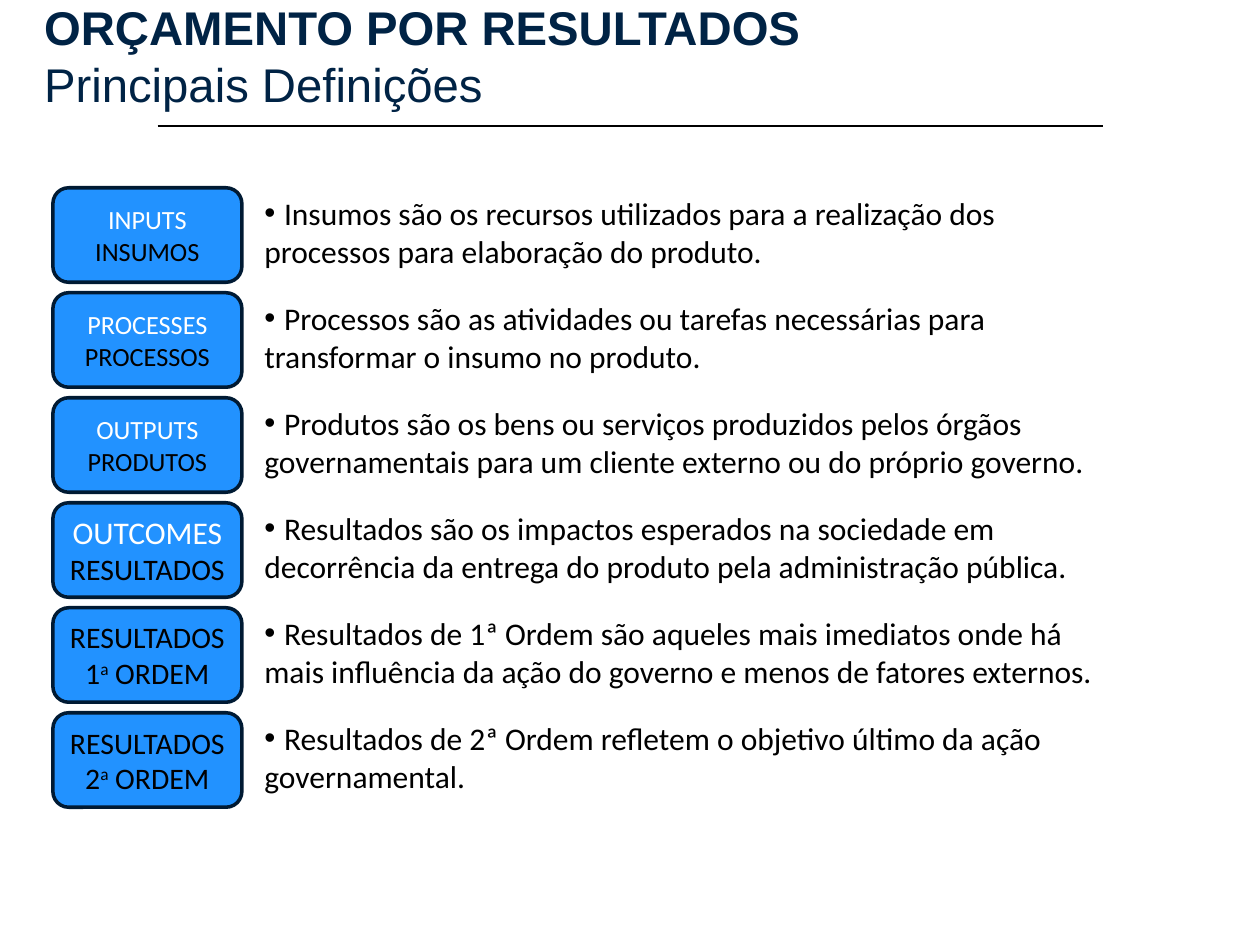
from dataclasses import dataclass

from lxml import etree
from pptx import Presentation
from pptx.dml.color import RGBColor
from pptx.enum.shapes import MSO_CONNECTOR, MSO_SHAPE
from pptx.enum.text import MSO_ANCHOR, MSO_AUTO_SIZE, PP_ALIGN
from pptx.oxml.ns import qn
from pptx.slide import Slide
from pptx.util import Inches, Pt

NAVY = RGBColor(0x00, 0x23, 0x45)
BLUE = RGBColor(0x22, 0x92, 0xFF)
EDGE = RGBColor(0x00, 0x1A, 0x33)
BLACK = RGBColor(0x00, 0x00, 0x00)
WHITE = RGBColor(0xFF, 0xFF, 0xFF)
BOX = MSO_SHAPE.FLOWCHART_ALTERNATE_PROCESS
LINE = MSO_CONNECTOR.STRAIGHT
MIDDLE, BOTTOM = MSO_ANCHOR.MIDDLE, MSO_ANCHOR.BOTTOM
LEFT, CENTER = PP_ALIGN.LEFT, PP_ALIGN.CENTER
FIXED, GROW = MSO_AUTO_SIZE.NONE, MSO_AUTO_SIZE.SHAPE_TO_FIT_TEXT
TITLE_ONLY = 5
TOP, PITCH = 1.49, 5 / 6


@dataclass
class Part:
    text: str
    size: float
    color: RGBColor = BLACK
    font: str = "Calibri"
    bold: bool = False
    raised: bool = False


@dataclass
class Row:
    label: list[list[Part]]
    text: str


def pair(first: str, second: str, size: int = 15, small: int = 15) -> list[list[Part]]:
    """English term in white above the Portuguese one in black."""
    return [[Part(first, size, WHITE)], [Part(second, small)]]


def order(num: int) -> list[list[Part]]:
    """Label of a result level, with a raised ordinal letter."""
    return [[Part(f"RESULTADOS {num}", 17), Part("a", 17, raised=True), Part(" ORDEM", 17)]]


ROWS = [
    Row(pair("INPUTS", "INSUMOS"),
        "Insumos são os recursos utilizados para a realização dos "
        "processos para elaboração do produto."),
    Row(pair("PROCESSES", "PROCESSOS"),
        "Processos são as atividades ou tarefas necessárias para "
        "transformar o insumo no produto."),
    Row(pair("OUTPUTS", "PRODUTOS"),
        "Produtos são os bens ou serviços produzidos pelos órgãos "
        "governamentais para um cliente externo ou do próprio governo."),
    Row(pair("OUTCOMES", "RESULTADOS", 18, 17),
        "Resultados são os impactos esperados na sociedade em "
        "decorrência da entrega do produto pela administração pública."),
    Row(order(1),
        "Resultados de 1ª Ordem são aqueles mais imediatos onde há "
        "mais influência da ação do governo e menos de fatores externos."),
    Row(order(2),
        "Resultados de 2ª Ordem refletem o objetivo último da ação governamental."),
]


def add_run(para, part: Part) -> None:
    run = para.add_run()
    run.text = part.text
    font = run.font
    font.name, font.size, font.bold = part.font, Pt(part.size), part.bold
    font.color.rgb = part.color
    if part.raised:
        run._r.get_or_add_rPr().set("baseline", "30000")


def add_title(slide: Slide) -> None:
    title = slide.shapes.title
    title.left, title.top = Inches(0.35), Inches(0.28)
    title.width, title.height = Inches(9.29), Inches(0.63)
    frame = title.text_frame
    frame.auto_size, frame.vertical_anchor = FIXED, BOTTOM
    frame.margin_left = frame.margin_right = frame.margin_top = 0
    frame.margin_bottom = Inches(0.02)
    para = frame.paragraphs[0]
    para.alignment = LEFT
    add_run(para, Part("ORÇAMENTO POR RESULTADOS", 27, NAVY, "Arial", bold=True))
    para.add_line_break()
    add_run(para, Part("Principais Definições", 27, NAVY, "Arial"))


def add_rule(slide: Slide) -> None:
    rule = slide.shapes.add_connector(LINE, Inches(1.25), Inches(1), Inches(8.75), Inches(1))
    rule.line.color.rgb, rule.line.width = BLACK, Pt(1.5)
    etree.SubElement(rule._element.spPr, qn("a:effectLst"))


def add_label(shapes, label: list[list[Part]], top: float) -> None:
    box = shapes.add_shape(BOX, Inches(0.42), Inches(top), Inches(1.5), Inches(0.75))
    box.shadow.inherit = False
    box.fill.solid()
    box.fill.fore_color.rgb = BLUE
    box.line.color.rgb, box.line.width = EDGE, Pt(2)
    frame = box.text_frame
    frame.vertical_anchor = MIDDLE
    for i, parts in enumerate(label):
        para = frame.add_paragraph() if i else frame.paragraphs[0]
        para.alignment = CENTER
        for part in parts:
            add_run(para, part)


def add_text(shapes, text: str, top: float) -> None:
    box = shapes.add_textbox(Inches(2), Inches(top), Inches(7), Inches(0.71))
    frame = box.text_frame
    frame.word_wrap, frame.auto_size = True, GROW
    para = frame.paragraphs[0]
    props = para._p.get_or_add_pPr()
    etree.SubElement(props, qn("a:buFont"), typeface="Arial")
    etree.SubElement(props, qn("a:buChar"), char="•")
    add_run(para, Part(" ", 18, font="Arial"))
    add_run(para, Part(text, 18))


def main() -> None:
    deck = Presentation()
    deck.slide_width, deck.slide_height = Inches(10), Inches(7.5)
    slide = deck.slides.add_slide(deck.slide_layouts[TITLE_ONLY])
    add_title(slide)
    add_rule(slide)
    for i, row in enumerate(ROWS):
        top = TOP + i * PITCH
        group = slide.shapes.add_group_shape()
        add_label(group.shapes, row.label, top)
        add_text(group.shapes, row.text, top)
    deck.save("out.pptx")


if __name__ == "__main__":
    main()
